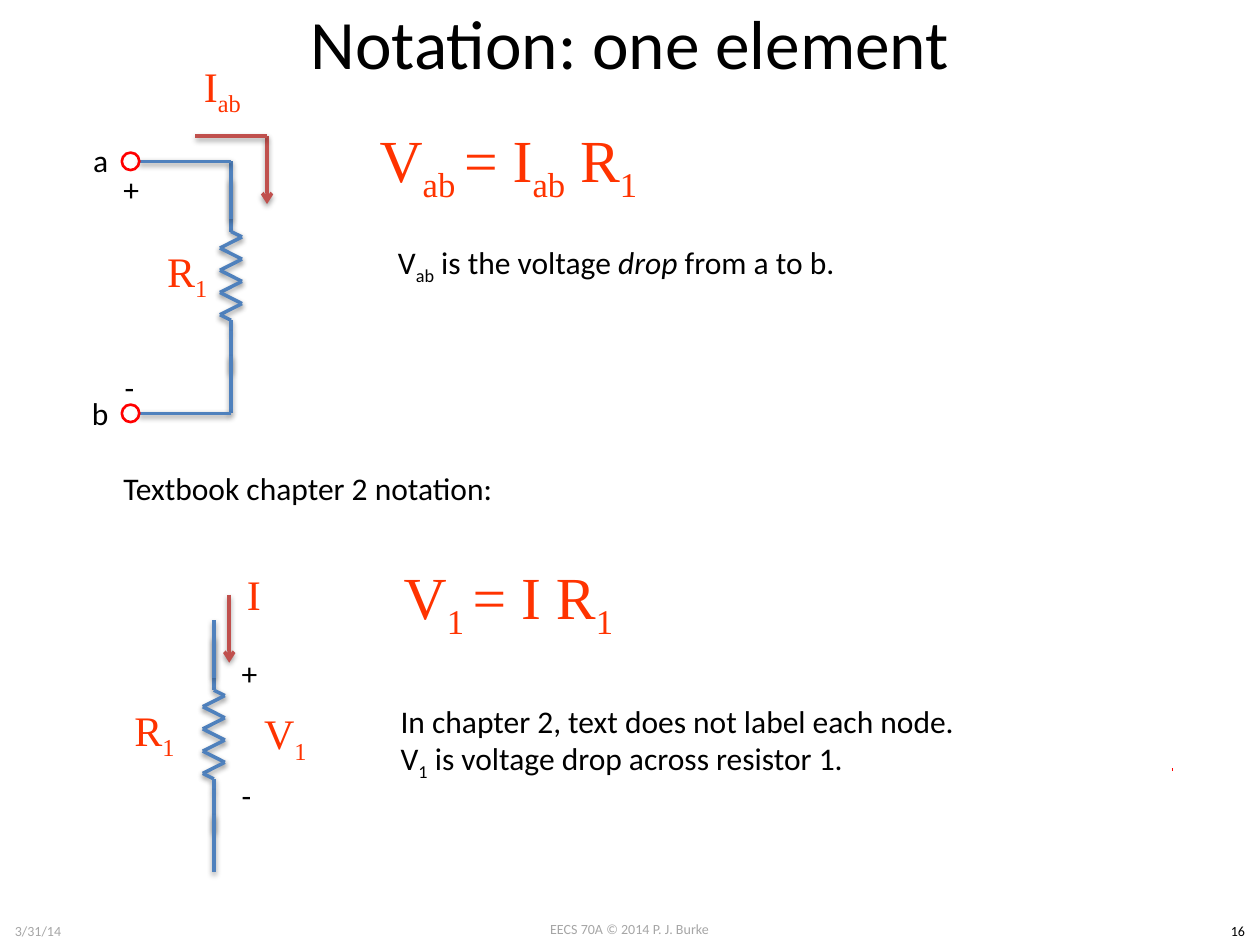
from itertools import pairwise

from lxml.etree import SubElement
from pptx import Presentation
from pptx.dml.color import RGBColor
from pptx.enum.shapes import MSO_CONNECTOR as Connector, MSO_SHAPE as Shape
from pptx.enum.text import MSO_ANCHOR as Anchor, MSO_AUTO_SIZE as AutoSize, PP_ALIGN as Align
from pptx.oxml.ns import qn
from pptx.util import Pt

BLACK = RGBColor(0x00, 0x00, 0x00)
GRAY = RGBColor(0xA6, 0xA6, 0xA6)
RED = RGBColor(0xFF, 0x00, 0x00)
ORANGE = RGBColor(0xFF, 0x33, 0x00)
WIRE = RGBColor(0x4F, 0x81, 0xBD)
CURRENT = RGBColor(0xC0, 0x50, 0x4D)

TOP_X, TOP_Y = 132, 102.2
LOW_X, LOW_Y = 122.2, 364.3
LEAD_START, LEAD_END = -10, 134


def write_text(frame, text, size=18, font="Calibri", color=BLACK, align=Align.LEFT,
               anchor=Anchor.TOP, wrap=False, grow=True):
    frame.word_wrap = wrap
    frame.auto_size = AutoSize.SHAPE_TO_FIT_TEXT if grow else AutoSize.NONE
    frame.vertical_anchor = anchor
    for index, line in enumerate(text.split("\n")):
        para = frame.add_paragraph() if index else frame.paragraphs[0]
        para.alignment = align
        for part, piece in enumerate(line.split("|")):
            for section, words in enumerate(piece.split("*")):
                if not words:
                    continue
                span = para.add_run()
                span.text = words
                span.font.size = Pt(size)
                span.font.name = font
                span.font.color.rgb = color
                if section % 2:
                    span.font.italic = True
                if part % 2:
                    span._r.get_or_add_rPr().set("baseline", "-25000")


def add_text(page, text, left, top, width, height, **style):
    box = page.shapes.add_textbox(Pt(left), Pt(top), Pt(width), Pt(height))
    write_text(box.text_frame, text, **style)


def add_formula(page, text, left, top, width, height, size=24):
    add_text(page, text, left, top, width, height, size=size, font="Times New Roman",
             color=ORANGE, align=Align.CENTER, anchor=Anchor.MIDDLE, wrap=True, grow=False)


def add_shadow(line):
    effects = SubElement(line._element.spPr, qn("a:effectLst"))
    shadow = SubElement(effects, qn("a:outerShdw"), blurRad="40000", dist="20000",
                        dir="5400000", rotWithShape="0")
    tint = SubElement(shadow, qn("a:srgbClr"), val=str(BLACK))
    SubElement(tint, qn("a:alpha"), val="38000")


def add_line(parent, start, end, color=WIRE, arrow=False):
    line = parent.shapes.add_connector(Connector.STRAIGHT, *map(Pt, start + end))
    line.line.color.rgb = color
    line.line.width = Pt(2)
    if arrow:
        SubElement(line.line._get_or_add_ln(), qn("a:tailEnd"), type="arrow")
    add_shadow(line)


def add_resistor(page, x, y):
    zigzag = [(x + (-6.3 if step % 2 else 6.3), y + 33.2 + 6.35 * step) for step in range(8)]
    points = ([(x, y + drop) for drop in (0, 23.7, 30.1)] + zigzag
              + [(x, y + drop) for drop in (80.8, 87.2, 110.9)])
    group = page.shapes.add_group_shape()
    for start, end in pairwise(points):
        add_line(group, start, end)
    add_line(page, (x, y + 101.5), (x, y + LEAD_END))
    add_line(page, (x, y + 23), (x, y + LEAD_START))


def add_terminal(page, y):
    add_line(page, (79.5, y), (TOP_X, y))
    ring = page.shapes.add_shape(Shape.OVAL, Pt(69.6), Pt(y - 5), Pt(10), Pt(10))
    ring.shadow.inherit = False
    ring.fill.background()
    ring.line.color.rgb = RED
    ring.line.width = Pt(1.5)


def add_dot(page, x, y):
    builder = page.shapes.build_freeform(Pt(x), Pt(y))
    builder.add_line_segments([(Pt(x + 0.6), Pt(y))], close=False)
    dot = builder.convert_to_shape()
    dot.shadow.inherit = False
    dot.fill.background()
    dot.line.color.rgb = RED
    dot.line.width = Pt(1.5)


def add_title(page, text):
    title = page.shapes.title
    title.left, title.top, title.width, title.height = Pt(36), Pt(0), Pt(648), Pt(48)
    write_text(title.text_frame, text, size=39.6, align=Align.CENTER,
               anchor=Anchor.MIDDLE, wrap=True, grow=False)


def add_footer(page):
    add_text(page, "EECS 70A © 2014 P. J. Burke", 275.8, 522.7, 168, 17,
             size=8, color=GRAY, align=Align.CENTER, wrap=True)
    add_text(page, "16", 694.8, 523.4, 25.2, 17, size=8, align=Align.CENTER, wrap=True)
    add_text(page, "3/31/14", 1.4, 523.4, 149, 16.6, size=8, color=GRAY,
             anchor=Anchor.MIDDLE, wrap=True, grow=False)


def add_node_notation(page):
    add_resistor(page, TOP_X, TOP_Y)
    for drop in (LEAD_START, LEAD_END):
        add_terminal(page, TOP_Y + drop)
    bend = (152.6, 77.8)
    group = page.shapes.add_group_shape()
    add_line(group, bend, (152.6, 116.6), CURRENT, arrow=True)
    add_line(group, (111.6, 77.8), bend, CURRENT)
    add_text(page, "a", 46.1, 77, 23, 29)
    add_text(page, "b", 45.4, 221.8, 24.5, 29)
    add_text(page, "+", 63.4, 93.6, 23.8, 29)
    add_text(page, "-", 64.1, 206.6, 20.2, 29)
    add_formula(page, "I|ab|", 84.2, 24.5, 85.7, 52.6)
    add_formula(page, "R|1|", 64.1, 130.3, 85.7, 52.6)
    add_formula(page, "V|ab |= I|ab| R|1 |", 198, 72, 190, 42.5, size=34.1)
    add_text(page, "V|ab| is the voltage *drop* from a to b.", 220.3, 135.4, 274.3, 29)


def add_textbook_notation(page):
    add_text(page, "Textbook chapter 2 notation:", 63.4, 264.2, 231.8, 29)
    add_resistor(page, LOW_X, LOW_Y)
    add_line(page, (131, 339.8), (131, 378.7), CURRENT, arrow=True)
    add_text(page, "+", 131, 370.1, 23.8, 29)
    add_text(page, "-", 131, 439.9, 20.2, 29)
    add_formula(page, "I", 102.2, 313.2, 85.7, 52.6)
    add_formula(page, "R|1|", 45.4, 392.4, 85.7, 52.6)
    add_formula(page, "V|1|", 138.2, 399.6, 49.7, 42.5)
    add_formula(page, "V|1 |= I R|1 |", 198, 321.8, 190, 42.5, size=34.1)
    add_text(page, "In chapter 2, text does not label each node.\n"
             "V|1| is voltage drop across resistor 1.", 221.8, 397.4, 334.8, 51)


def main():
    deck = Presentation()
    deck.slide_width, deck.slide_height = Pt(720), Pt(540)
    page = deck.slides.add_slide(deck.slide_layouts[5])
    add_title(page, "Notation: one element")
    add_node_notation(page)
    add_textbook_notation(page)
    add_dot(page, 669.6, 439.9)
    add_footer(page)
    deck.save("out.pptx")


if __name__ == "__main__":
    main()
